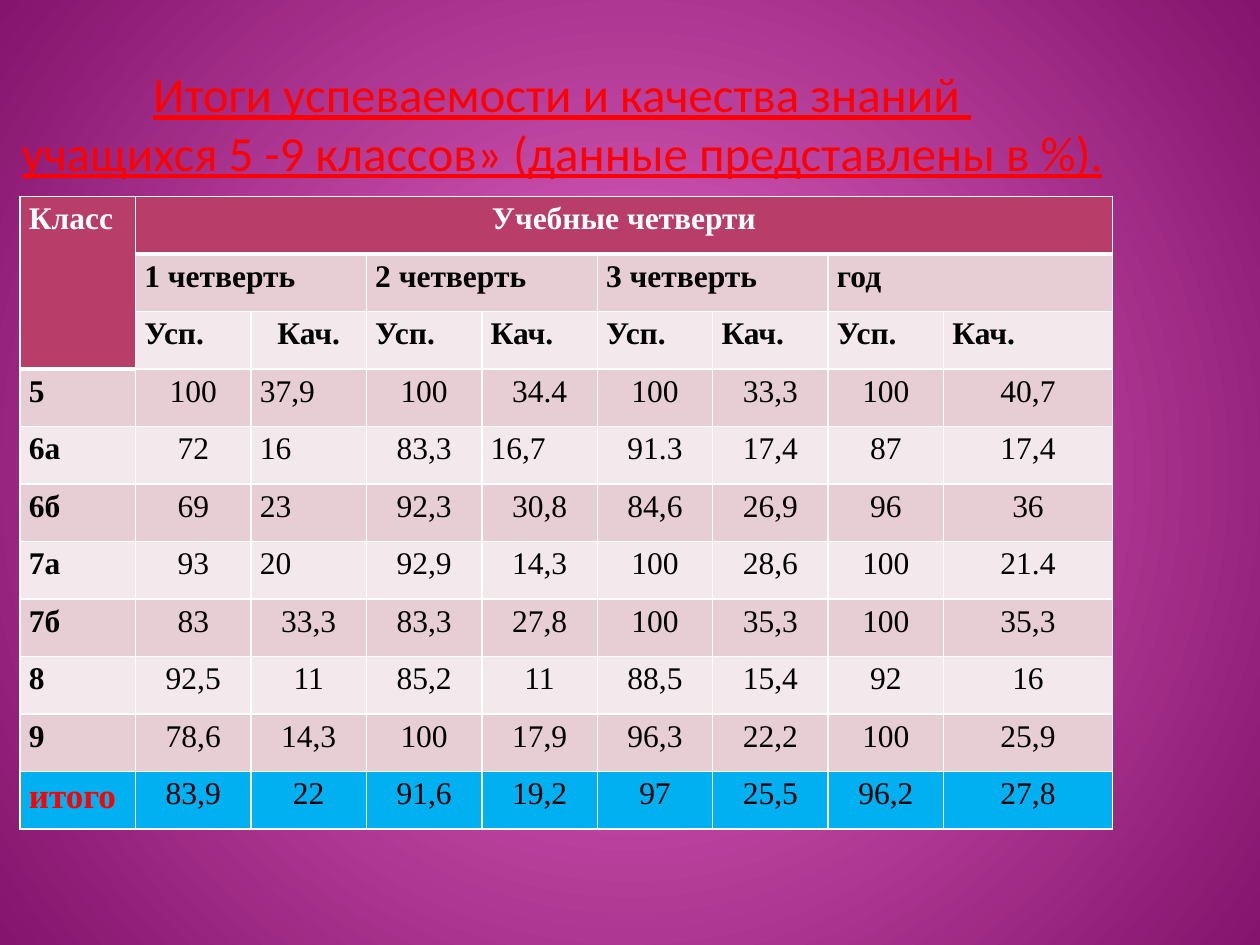
import dataclasses

import pptx
import pptx.dml.color
import pptx.enum.text
import pptx.oxml
import pptx.oxml.ns
import pptx.util
from pptx.util import Inches

ALIGN = pptx.enum.text.PP_ALIGN
WHITE, BLACK, RED = "FFFFFF", "000000", "FF0000"
HEADER, BAND_DARK, BAND_LIGHT, TOTAL = "B83D68", "E6CED4", "F3E8EB", "00B0F0"
THIN, THICK = 1, 3

TITLE = "Итоги успеваемости и качества знаний \vучащихся 5 -9 классов» (данные представлены в %)."
GRID = [
    ["Класс", "Учебные четверти"] + [""] * 7,
    ["", "1 четверть", "", "2 четверть", "", "3 четверть", "", "год", ""],
    [""] + ["Усп.", "Кач."] * 4,
    ["5", "100", "37,9", "100", "34.4", "100", "33,3", "100", "40,7"],
    ["6а", "72", "16", "83,3", "16,7", "91.3", "17,4", "87", "17,4"],
    ["6б", "69", "23", "92,3", "30,8", "84,6", "26,9", "96", "36"],
    ["7а", "93", "20", "92,9", "14,3", "100", "28,6", "100", "21.4"],
    ["7б", "83", "33,3", "83,3", "27,8", "100", "35,3", "100", "35,3"],
    ["8", "92,5", "11", "85,2", "11", "88,5", "15,4", "92", "16"],
    ["9", "78,6", "14,3", "100", "17,9", "96,3", "22,2", "100", "25,9"],
    ["итого", "83,9", "22", "91,6", "19,2", "97", "25,5", "96,2", "27,8"],
]
HEAD_ROWS = 3
LAST_ROW, LAST_COLUMN = len(GRID) - 1, len(GRID[0]) - 1
# Cells (row, column) whose alignment departs from the rule for their row
ALIGN_EXCEPTIONS = {
    (0, 1): ALIGN.CENTER, (2, 2): ALIGN.CENTER, (3, 2): ALIGN.JUSTIFY,
    (4, 2): ALIGN.LEFT, (4, 4): ALIGN.LEFT, (5, 2): ALIGN.LEFT, (6, 2): ALIGN.LEFT,
}


@dataclasses.dataclass
class CellStyle:
    fill: str
    color: str
    size: int
    bold: bool
    align: ALIGN
    top: int
    bottom: int


def rgb(value: str) -> pptx.dml.color.RGBColor:
    return pptx.dml.color.RGBColor.from_string(value)


def format_font(font, name: str, size: int, color: str) -> None:
    font.name = name
    font.size = pptx.util.Pt(size)
    font.color.rgb = rgb(color)


def paint_background(slide) -> None:
    fill = slide.background.fill
    fill.gradient()
    for stop, color in zip(fill.gradient_stops, ("E869C7", "84146D")):
        stop.color.rgb = rgb(color)
    gradient = slide.element.find(".//" + pptx.oxml.ns.qn("a:gradFill"))
    gradient.remove(gradient.find(pptx.oxml.ns.qn("a:lin")))
    gradient.append(pptx.oxml.parse_xml(
        f'<a:path {pptx.oxml.ns.nsdecls("a")} path="circle">'
        '<a:fillToRect l="50000" t="50000" r="50000" b="50000"/></a:path>'))


def add_title(slide) -> None:
    box = slide.shapes.add_textbox(Inches(0.02), Inches(0.45), Inches(8.88), Inches(1.04))
    frame = box.text_frame
    frame.word_wrap = False
    frame.vertical_anchor = pptx.enum.text.MSO_ANCHOR.MIDDLE
    frame.text = TITLE
    para = frame.paragraphs[0]
    para.alignment = ALIGN.CENTER
    for span in para.runs:
        format_font(span.font, "Calibri", 28, RED)
        span.font.underline = True


def cell_style(row: int, column: int) -> CellStyle:
    label = column == 0 or row < HEAD_ROWS
    heading = row == 0 or (column == 0 and row < HEAD_ROWS)
    total = row == LAST_ROW
    total_label = total and column == 0
    band = BAND_DARK if row % 2 else BAND_LIGHT
    heading_end = HEAD_ROWS if column == 0 else 1
    return CellStyle(
        fill=HEADER if heading else TOTAL if total else band,
        color=WHITE if heading else RED if total_label else BLACK,
        size=20 if total_label else 18,
        bold=label,
        align=ALIGN_EXCEPTIONS.get((row, column), ALIGN.JUSTIFY if label else ALIGN.CENTER),
        top=THICK if row == heading_end else THIN,
        bottom=THICK if heading else THIN,
    )


def format_cell(cell, text: str, style: CellStyle) -> None:
    cell.margin_left = cell.margin_right = Inches(0.07)
    cell.margin_top = cell.margin_bottom = 0
    properties = cell._tc.get_or_add_tcPr()
    for side, width in (("L", THIN), ("R", THIN), ("T", style.top), ("B", style.bottom)):
        properties.append(pptx.oxml.parse_xml(
            f'<a:ln{side} {pptx.oxml.ns.nsdecls("a")} w="{pptx.util.Pt(width)}">'
            f'<a:solidFill><a:srgbClr val="{WHITE}"/></a:solidFill></a:ln{side}>'))
    cell.fill.solid()
    cell.fill.fore_color.rgb = rgb(style.fill)
    if not text:
        return
    cell.text_frame.text = text
    para = cell.text_frame.paragraphs[0]
    para.alignment = style.align
    para.line_spacing = 1.15
    para.space_after = pptx.util.Pt(10)
    font = para.runs[0].font
    format_font(font, "Times New Roman", style.size, style.color)
    font.bold = style.bold


def add_results_table(slide) -> None:
    width, last_width = 8.67, 1.34
    table = slide.shapes.add_table(
        len(GRID), len(GRID[0]), Inches(0.16), Inches(1.56), Inches(width), Inches(5.02)).table
    table.first_row = table.horz_banding = False
    for column in table.columns:
        column.width = Inches((width - last_width) / LAST_COLUMN)
    table.columns[LAST_COLUMN].width = Inches(last_width)

    for row, texts in enumerate(GRID):
        for column, text in enumerate(texts):
            format_cell(table.cell(row, column), text, cell_style(row, column))

    # Merged headings: class, all quarters, then each quarter
    table.cell(0, 0).merge(table.cell(HEAD_ROWS - 1, 0))
    table.cell(0, 1).merge(table.cell(0, LAST_COLUMN))
    for column in range(1, LAST_COLUMN, 2):
        table.cell(1, column).merge(table.cell(1, column + 1))


def main() -> None:
    deck = pptx.Presentation()
    deck.slide_width, deck.slide_height = Inches(10), Inches(7.5)
    slide = deck.slides.add_slide(deck.slide_layouts[6])
    paint_background(slide)
    add_title(slide)
    add_results_table(slide)
    deck.save("out.pptx")


if __name__ == "__main__":
    main()
